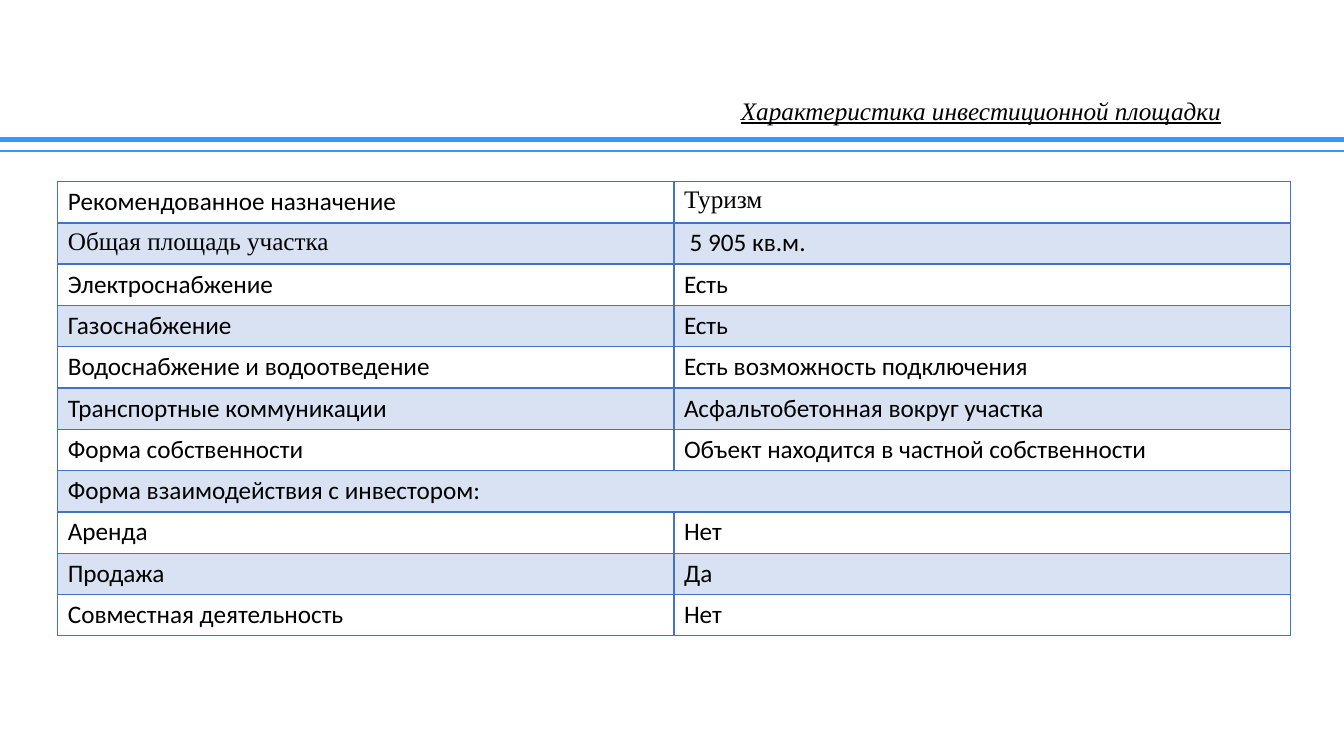
from dataclasses import dataclass

from lxml import etree
from pptx import Presentation
from pptx import util as u
from pptx.dml.color import RGBColor
from pptx.enum import shapes, text
from pptx.oxml.ns import qn

WIDTH, HEIGHT = u.Inches(13.333), u.Inches(7.5)
COLORS = {"rule": "3399FF", "grid": "4472C4", "text": "000000"}
SANS, SERIF = "Calibri", "Times New Roman"
ROW_HEIGHT = u.Inches(0.41)
BAND_ALPHA = 20


@dataclass
class Rule:
    y: float
    weight: float


@dataclass
class Feature:
    name: str
    value: str = ""
    name_font: str = SANS
    value_font: str = SANS


RULES = [Rule(0.184, 3.5), Rule(0.2, 1.5)]
FEATURES = [
    Feature("Рекомендованное назначение", "Туризм", value_font=SERIF),
    Feature("Общая площадь участка", " 5 905 кв.м.", name_font=SERIF),
    Feature("Электроснабжение", "Есть"),
    Feature("Газоснабжение", "Есть"),
    Feature("Водоснабжение и водоотведение", "Есть возможность подключения"),
    Feature("Транспортные коммуникации", "Асфальтобетонная вокруг участка"),
    Feature("Форма собственности", "Объект находится в частной собственности"),
    Feature("Форма взаимодействия с инвестором:"),
    Feature("Аренда", "Нет"),
    Feature("Продажа", "Да"),
    Feature("Совместная деятельность", "Нет"),
]


def across(share: float) -> int:
    return round(WIDTH * share)


def down(share: float) -> int:
    return round(HEIGHT * share)


def color(name: str) -> RGBColor:
    return RGBColor.from_string(COLORS[name])


def set_font(p, face: str) -> None:
    p.font.name = face
    p.font.size = u.Pt(18)
    p.font.color.rgb = color("text")


def add_rule(s, rule: Rule) -> None:
    y = down(rule.y)
    line = s.shapes.add_connector(shapes.MSO_CONNECTOR.STRAIGHT, 0, y, WIDTH, y)
    line.line.color.rgb = color("rule")
    line.line.width = u.Pt(rule.weight)
    etree.SubElement(line._element.spPr, qn("a:effectLst"))


def add_title(s, title: str) -> None:
    sp = s.shapes.add_textbox(across(0.5), down(0.13), across(0.46), down(0.036))
    tf = sp.text_frame
    tf.word_wrap = True
    tf.margin_top = tf.margin_bottom = 0
    tf.vertical_anchor = text.MSO_ANCHOR.MIDDLE
    p = tf.paragraphs[0]
    p.text = title
    p.alignment = text.PP_ALIGN.CENTER
    p.line_spacing = 0.9
    set_font(p, SERIF)
    p.font.italic = p.font.underline = True


def set_borders(cell, bottom: float) -> None:
    props = cell._tc.get_or_add_tcPr()
    for side, weight in (("L", 1), ("R", 1), ("T", 1), ("B", bottom)):
        ln = etree.SubElement(props, qn(f"a:ln{side}"), w=str(u.Pt(weight)))
        fill = etree.SubElement(ln, qn("a:solidFill"))
        etree.SubElement(fill, qn("a:srgbClr"), val=COLORS["grid"])


def set_band(cell, banded: bool) -> None:
    if not banded:
        cell.fill.background()
        return
    cell.fill.solid()
    cell.fill.fore_color.rgb = color("grid")
    tint = cell._tc.tcPr.find(".//" + qn("a:solidFill") + "[last()]/" + qn("a:srgbClr"))
    tint = cell._tc.tcPr.find(qn("a:solidFill")).find(qn("a:srgbClr"))
    etree.SubElement(tint, qn("a:alpha"), val=str(BAND_ALPHA * 1000))


def add_features(s, features: list[Feature]) -> None:
    table = s.shapes.add_table(
        len(features), 2, across(0.043), down(0.24), across(0.917), ROW_HEIGHT * len(features)
    ).table
    table.first_row = table.horz_banding = False
    for i, feature in enumerate(features):
        table.rows[i].height = ROW_HEIGHT
        content = ((feature.name, feature.name_font), (feature.value, feature.value_font))
        for j, (words, face) in enumerate(content):
            cell = table.cell(i, j)
            set_borders(cell, 2 if i == 0 else 1)
            set_band(cell, i % 2 == 1)
            p = cell.text_frame.paragraphs[0]
            p.text = words
            set_font(p, face)
        if not feature.value:
            table.cell(i, 0).merge(table.cell(i, 1))


def main() -> None:
    prs = Presentation()
    prs.slide_width, prs.slide_height = WIDTH, HEIGHT
    s = prs.slides.add_slide(prs.slide_layouts[6])
    for rule in RULES:
        add_rule(s, rule)
    add_title(s, "Характеристика инвестиционной площадки")
    add_features(s, FEATURES)
    prs.save("out.pptx")


if __name__ == "__main__":
    main()
